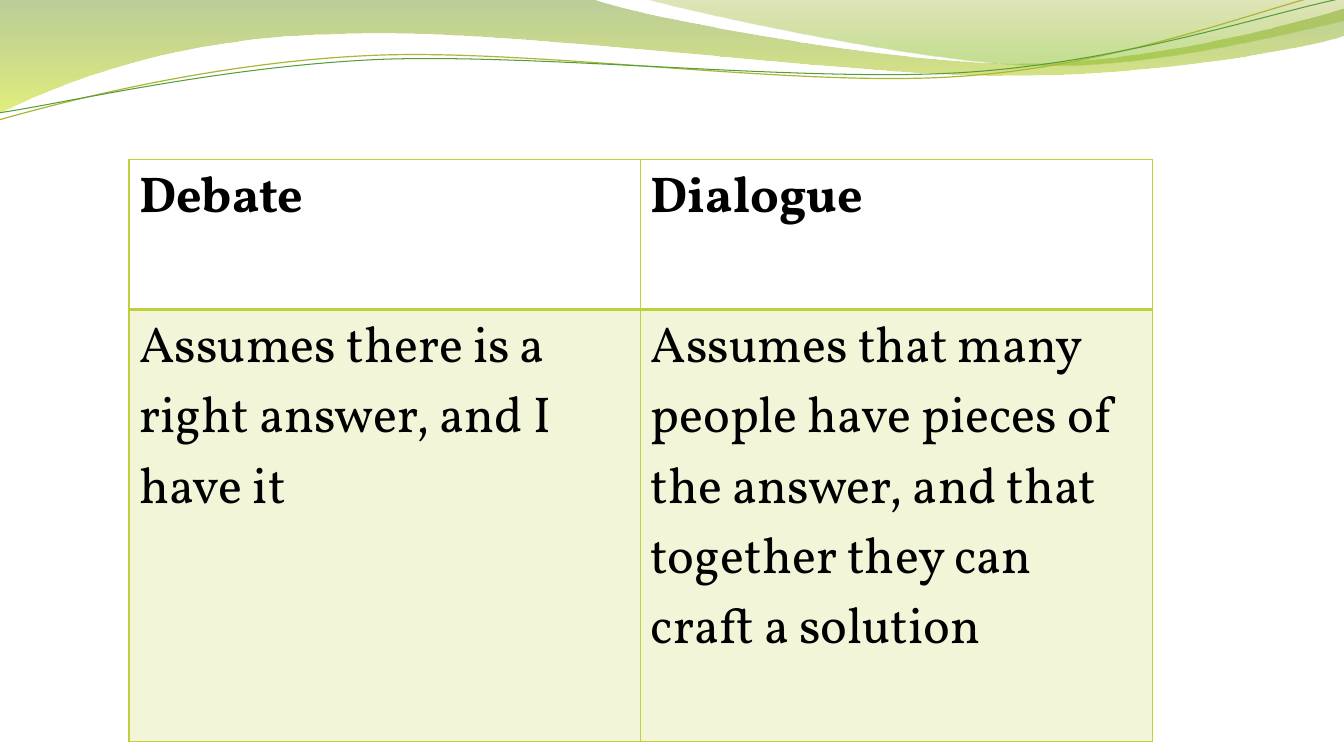
from math import cos, radians, sin

from lxml.etree import SubElement
from pptx import Presentation
from pptx.dml.color import RGBColor
from pptx.oxml import parse_xml
from pptx.oxml.ns import nsdecls, qn
from pptx.util import Inches, Pt

COLORS = {
    "olive": "69921C", "lime": "CCE10F", "moss": "9BAA1A", "leaf": "81BA16",
    "gold": "A9B733", "green": "549E39", "table": "C0CF3A", "text": "000000",
}
FONT = "Vollkorn"
ROWS = [
    ("Debate", "Dialogue"),
    ("Assumes there is a right answer, and I have it",
     "Assumes that many people have pieces of the answer, and that together they can craft a solution"),
]
TABLE_LEFT, TABLE_TOP, TABLE_WIDTH = 1.28, 1.58, 10.15
ROW_HEIGHTS = (1.49, 4.29)

BANDS = [
    {"start": (0, 0),
     "segments": [
         [(5.87, -0.01)],
         [(6.34, 0.17), (8.84, 0.63), (10.11, 0.63)],
         [(11.37, 0.63), (12.77, 0.26), (13.33, 0.09)],
         [(13.34, 0.36)],
         [(13.11, 0.44), (11.59, 0.76), (9.94, 0.75)],
         [(8.29, 0.75), (5.09, 0.28), (3.43, 0.34)],
         [(1.72, 0.36), (0.61, 0.83), (-0.02, 1.13)],
     ],
     "stops": [(0, "olive", 45), (1, "lime", 55)]},
    {"start": (6.38, -0.01),
     "segments": [
         [(6.79, 0.11), (9.09, 0.62), (10.25, 0.65)],
         [(11.4, 0.69), (12.82, 0.32), (13.33, 0.21)],
         [(13.33, 0)],
     ],
     "stops": [(0, "moss", 30), (0.8, "leaf", 45)]},
]
TILT = 2.7
WAVES = [
    {"start": (-0.01, 1.19),
     "segments": [
         [(0.63, 1.01), (2.1, 0.62), (3.69, 0.55)],
         [(5.27, 0.48), (7.89, 0.87), (9.49, 0.76)],
         [(11.1, 0.66), (12.51, 0.08), (13.3, -0.1)],
     ],
     "center": (6.65, 0.57), "color": "gold", "width": 0.85},
    {"start": (-0.01, 1.12),
     "segments": [
         [(0.62, 1.03), (2.18, 0.66), (3.77, 0.59)],
         [(5.37, 0.53), (7.96, 0.82), (9.55, 0.72)],
         [(11.14, 0.62), (12.55, 0.14), (13.33, -0.02)],
     ],
     "center": (6.67, 0.59), "color": "green", "width": 0.75},
]


def rgb(name):
    return RGBColor.from_string(COLORS[name])


def set_alpha(clr, percent):
    SubElement(clr, qn("a:alpha")).set("val", str(percent * 1000))


def level(point, center):
    x, y = point[0] - center[0], point[1] - center[1]
    c, d = cos(radians(TILT)), sin(radians(TILT))
    return center[0] + x * c - y * d, center[1] + x * d + y * c


def add_outline(s, start, segments, close):
    def emu(point):
        return Inches(point[0]), Inches(point[1])

    builder = s.shapes.build_freeform(*emu(start))
    builder.add_line_segments([emu(p) for seg in segments for p in seg], close=close)
    sp = builder.convert_to_shape()
    sp.shadow.inherit = False
    lines = iter(list(sp._element.spPr.iter(qn("a:lnTo"))))
    for seg in segments:
        parts = [next(lines) for _ in seg]
        if len(parts) == 3:
            curve = parse_xml(f'<a:cubicBezTo {nsdecls("a")}/>')
            parts[0].addprevious(curve)
            for part in parts:
                curve.append(part[0])
                part.getparent().remove(part)
    return sp


def add_band(s, band):
    sp = add_outline(s, band["start"], band["segments"], True)
    sp.line.fill.background()
    sp.fill.gradient()
    sp.fill.gradient_angle = 270
    for stop, (pos, color, _) in zip(sp.fill.gradient_stops, band["stops"]):
        stop.position = pos
        stop.color.rgb = rgb(color)
    for clr, (_, _, alpha) in zip(sp._element.spPr.iter(qn("a:srgbClr")), band["stops"]):
        set_alpha(clr, alpha)


def add_wave(s, wave):
    center = wave["center"]
    segments = [[level(p, center) for p in seg] for seg in wave["segments"]]
    sp = add_outline(s, level(wave["start"], center), segments, False)
    sp.rotation = 360 - TILT
    sp.fill.background()
    sp.line.color.rgb = rgb(wave["color"])
    sp.line.width = Pt(wave["width"])


def set_borders(cell, widths):
    tcPr = cell._tc.get_or_add_tcPr()
    for i, (side, width) in enumerate(zip("LRTB", widths)):
        tcPr.insert(i, parse_xml(
            f'<a:ln{side} {nsdecls("a")} w="{Pt(width)}"><a:solidFill>'
            f'<a:srgbClr val="{COLORS["table"]}"/></a:solidFill></a:ln{side}>'))


def fill_cell(cell, text, header):
    r = cell.text_frame.paragraphs[0].add_run()
    r.text = text
    r.font.name = FONT
    r.font.size = Pt(36)
    r.font.bold = header
    r.font.color.rgb = rgb("text")
    if header:
        cell.fill.background()
        set_borders(cell, (1, 1, 1, 2))
    else:
        cell.fill.solid()
        cell.fill.fore_color.rgb = rgb("table")
        set_alpha(next(cell._tc.tcPr.iter(qn("a:srgbClr"))), 20)
        set_borders(cell, (1, 1, 2, 1))


def add_comparison(s):
    table = s.shapes.add_table(
        len(ROWS), len(ROWS[0]), Inches(TABLE_LEFT), Inches(TABLE_TOP),
        Inches(TABLE_WIDTH), Inches(sum(ROW_HEIGHTS))).table
    table.horz_banding = False
    for i, (texts, height) in enumerate(zip(ROWS, ROW_HEIGHTS)):
        table.rows[i].height = Inches(height)
        for j, text in enumerate(texts):
            fill_cell(table.cell(i, j), text, i == 0)


def main():
    prs = Presentation()
    prs.slide_width, prs.slide_height = Inches(13.33), Inches(7.5)
    s = prs.slides.add_slide(prs.slide_layouts[6])
    for band in BANDS:
        add_band(s, band)
    for wave in WAVES:
        add_wave(s, wave)
    add_comparison(s)
    prs.save("out.pptx")


if __name__ == "__main__":
    main()
